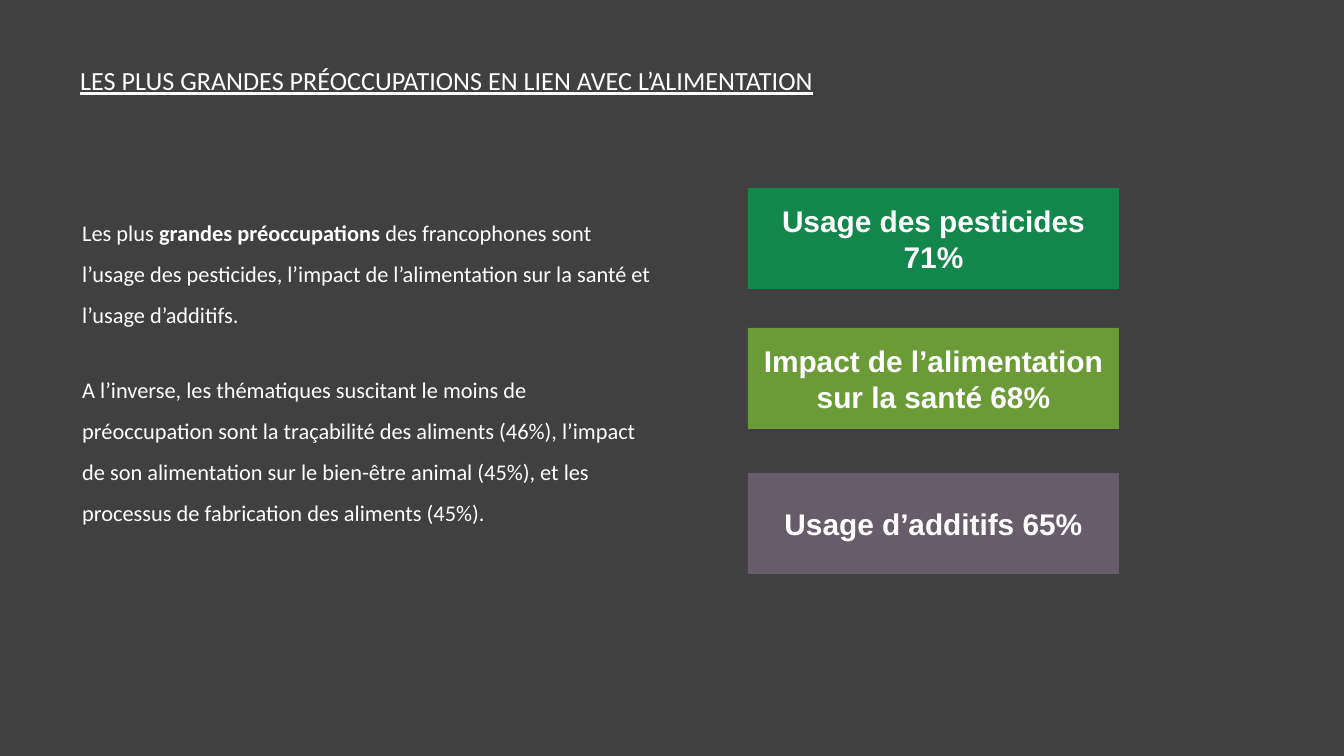
from lxml import etree
from pptx import Presentation
from pptx.dml.color import RGBColor
from pptx.enum.shapes import MSO_SHAPE
from pptx.enum.text import MSO_ANCHOR, PP_ALIGN
from pptx.oxml.ns import qn
from pptx.util import Emu, Pt

RECTANGLE = MSO_SHAPE.RECTANGLE
MIDDLE, TOP = MSO_ANCHOR.MIDDLE, MSO_ANCHOR.TOP
CENTER, LEFT = PP_ALIGN.CENTER, PP_ALIGN.LEFT

EMU_PER_PX = 914400 / 134.4
COLORS = {
    "background": "404040",
    "text": "FFFFFF",
    "pesticides": "00A551",
    "health": "7EC234",
    "additives": "78697B",
}


def px(value):
    return Emu(round(value * EMU_PER_PX))


def rgb(name):
    return RGBColor.from_string(COLORS[name])


def write(frame, runs, size, font, bold=False, underline=None, align=LEFT,
          anchor=TOP, line=None, before=None):
    """Fill a frame with one paragraph; runs holds (text, bold) pairs or a string."""
    frame.word_wrap = True
    frame.vertical_anchor = anchor
    paragraph = frame.paragraphs[0]
    paragraph.alignment = align
    if line:
        paragraph.line_spacing = Pt(line)
    if before:
        paragraph.space_before = Pt(before)
    if isinstance(runs, str):
        runs = [(runs, bold)]
    for content, is_bold in runs:
        run = paragraph.add_run()
        run.text = content
        run.font.name = font
        run.font.size = Pt(size)
        run.font.bold = is_bold
        run.font.underline = underline
        run.font.color.rgb = rgb("text")


class SlideBuilder:
    heading = {"size": 14, "font": "Calibri", "underline": True}
    body = {"size": 12, "font": "Calibri", "line": 22, "before": 11.8}
    label = {"size": 16, "font": "Arial", "bold": True,
             "align": CENTER, "anchor": MIDDLE}
    card_opacity = 70

    def __init__(self, slide):
        self.slide = slide
        fill = slide.background.fill
        fill.solid()
        fill.fore_color.rgb = rgb("background")

    def text(self, runs, x, y, w, h, style):
        box = self.slide.shapes.add_textbox(px(x), px(y), px(w), px(h))
        write(box.text_frame, runs, **style)

    def card(self, content, color, x, y, w, h):
        card = self.slide.shapes.add_shape(RECTANGLE, px(x), px(y), px(w), px(h))
        card.shadow.inherit = False
        card.line.fill.background()
        card.fill.solid()
        card.fill.fore_color.rgb = rgb(color)
        # Let the background show through the fill
        srgb = card._element.spPr.find(qn("a:solidFill")).find(qn("a:srgbClr"))
        alpha = etree.SubElement(srgb, qn("a:alpha"))
        alpha.set("val", str(self.card_opacity * 1000))
        write(card.text_frame, content, **self.label)


def main():
    deck = Presentation()
    deck.slide_width, deck.slide_height = px(1344), px(756)
    builder = SlideBuilder(deck.slides.add_slide(deck.slide_layouts[6]))

    # Commentary
    builder.text(
        "A l’inverse, les thématiques suscitant le moins de préoccupation sont "
        "la traçabilité des aliments (46%), l’impact de son alimentation sur le "
        "bien-être animal (45%), et les processus de fabrication des aliments (45%).",
        69, 355, 603, 202, builder.body)
    builder.text(
        [("Les plus ", False),
         ("grandes préoccupations ", True),
         ("des francophones sont l’usage des pesticides, l’impact de "
          "l’alimentation sur la santé et l’usage d’additifs.", False)],
        69, 198, 603, 180, builder.body)

    # Top three concerns
    concerns = [
        ("Usage des pesticides 71%", "pesticides", 188),
        ("Impact de l’alimentation sur la santé 68%", "health", 328),
        ("Usage d’additifs 65%", "additives", 473),
    ]
    for concern, color, y in concerns:
        builder.card(concern, color, 748, y, 371, 101)

    # Title
    builder.text("LES PLUS GRANDES PRÉOCCUPATIONS EN LIEN AVEC L’ALIMENTATION",
                 67, 58, 1210, 62, builder.heading)

    deck.save("out.pptx")


if __name__ == "__main__":
    main()
